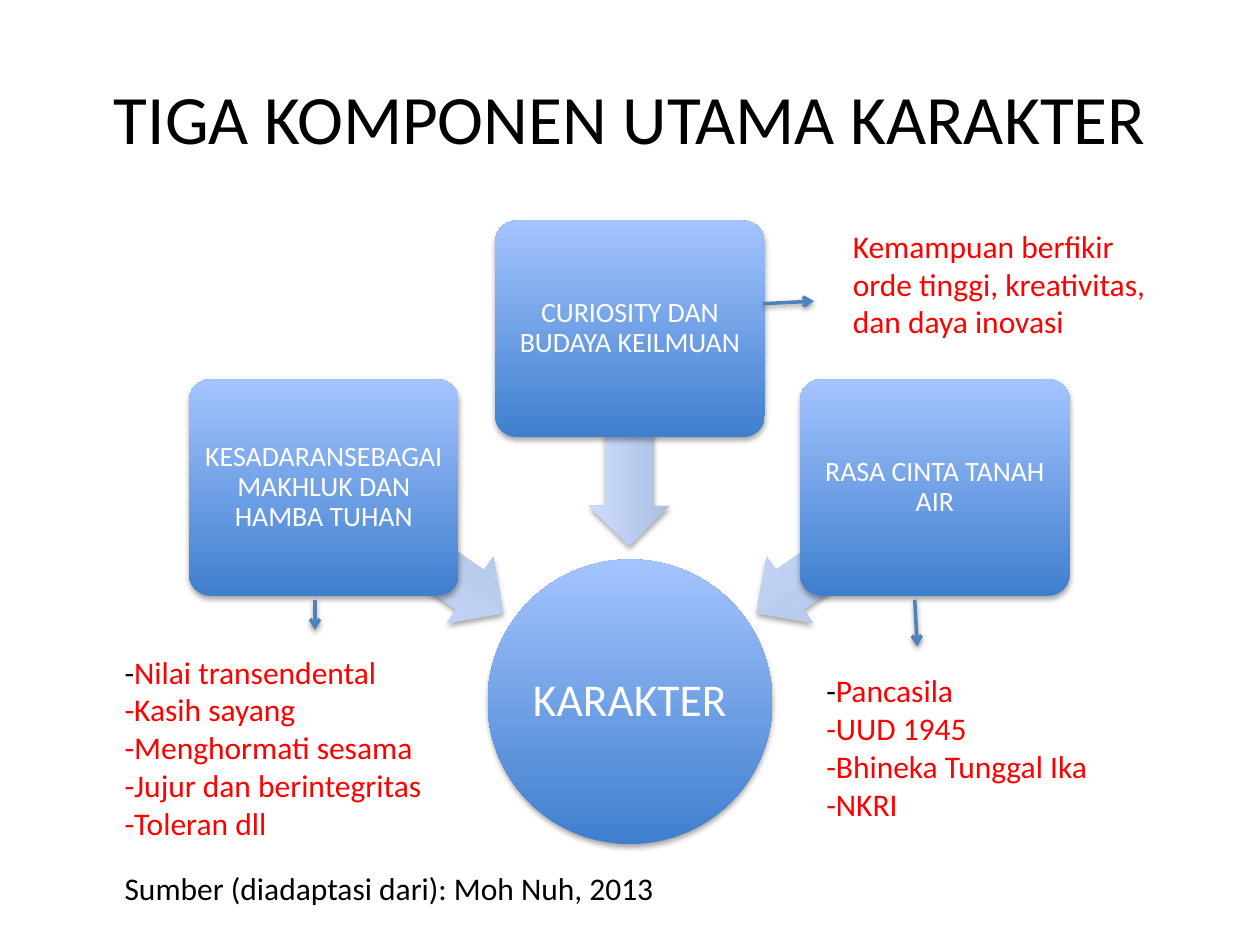
import pptx
import pptx.util
import pptx.dml.color
import pptx.enum.shapes
import pptx.enum.text
import pptx.oxml
import pptx.oxml.ns
from pptx.util import Inches

RGBColor = pptx.dml.color.RGBColor
BLACK = RGBColor(0x00, 0x00, 0x00)
WHITE = RGBColor(0xFF, 0xFF, 0xFF)
RED = RGBColor(0xFF, 0x00, 0x00)
LINE_BLUE = RGBColor(0x4F, 0x81, 0xBD)
BOX_GRADIENT = (RGBColor(0x3F, 0x7F, 0xCE), RGBColor(0xA4, 0xC4, 0xFF))
ARROW_GRADIENT = (RGBColor(0xAD, 0xBF, 0xE1), RGBColor(0xCC, 0xDD, 0xFF))
SHAPES = pptx.enum.shapes.MSO_SHAPE
MIDDLE = pptx.enum.text.MSO_ANCHOR.MIDDLE
CENTER = pptx.enum.text.PP_ALIGN.CENTER
SHADOW_XML = (
    '<a:effectLst {}><a:outerShdw blurRad="40000" dist="{}" dir="5400000" rotWithShape="0">'
    '<a:srgbClr val="000000"><a:alpha val="{}"/></a:srgbClr></a:outerShdw></a:effectLst>'
)
NAMESPACE = pptx.oxml.ns.nsdecls("a")


def format_runs(text_frame, size, color):
    for paragraph in text_frame.paragraphs:
        for run in paragraph.runs:
            run.font.name = "Calibri"
            run.font.size = pptx.util.Pt(size)
            run.font.color.rgb = color


def add_gradient_shape(kind, left, top, width, height, colors, text="", size=16, inset=0.03):
    shape = slide.shapes.add_shape(kind, Inches(left), Inches(top), Inches(width), Inches(height))
    shape.fill.gradient()
    shape.fill.gradient_angle = 90
    for stop, color in zip(shape.fill.gradient_stops, colors):
        stop.color.rgb = color
    shape.line.fill.background()
    shape._element.spPr.append(pptx.oxml.parse_xml(SHADOW_XML.format(NAMESPACE, 23000, 35000)))
    text_frame = shape.text_frame
    text_frame.word_wrap = True
    text_frame.vertical_anchor = MIDDLE
    text_frame.margin_left = text_frame.margin_right = Inches(inset)
    text_frame.margin_top = text_frame.margin_bottom = Inches(inset)
    text_frame.text = text
    text_frame.paragraphs[0].alignment = CENTER
    text_frame.paragraphs[0].line_spacing = 0.9
    format_runs(text_frame, size, WHITE)
    return shape


presentation = pptx.Presentation()
presentation.slide_width = Inches(10)
presentation.slide_height = Inches(7.5)
slide = presentation.slides.add_slide(presentation.slide_layouts[5])

title = slide.shapes.title
title.left, title.top, title.width, title.height = Inches(0.5), Inches(0.3), Inches(9), Inches(1.25)
title.text_frame.text = "TIGA KOMPONEN UTAMA KARAKTER"
title.text_frame.vertical_anchor = MIDDLE
title.text_frame.paragraphs[0].alignment = CENTER
format_runs(title.text_frame, 39.6, BLACK)

add_gradient_shape(SHAPES.OVAL, 3.87, 4.44, 2.26, 2.26, BOX_GRADIENT, "KARAKTER", 26, 0.02)

components = [
    ("KESADARANSEBAGAI MAKHLUK DAN HAMBA TUHAN", 1.5, 3.01, 2.42, 4.05, 215),
    ("CURIOSITY DAN BUDAYA KEILMUAN", 3.93, 1.75, 4.13, 3.15, 270),
    ("RASA CINTA TANAH AIR", 6.35, 3.01, 5.85, 4.05, 325),
]
for text, box_left, box_top, arrow_left, arrow_top, rotation in components:
    arrow = add_gradient_shape(SHAPES.LEFT_ARROW, arrow_left, arrow_top, 1.73, 0.64, ARROW_GRADIENT)
    arrow.adjustments[0] = 0.6
    arrow.adjustments[1] = 0.5
    arrow.rotation = rotation
    box = add_gradient_shape(
        SHAPES.ROUNDED_RECTANGLE, box_left, box_top, 2.14, 1.72, BOX_GRADIENT, text
    )
    box.adjustments[0] = 0.1

notes = [
    (0.89, 6.85, 5.39, 0.4, BLACK, ["Sumber (diadaptasi dari): Moh Nuh, 2013"]),
    (0.89, 5.13, 2.78, 1.62, RED, [
        "-Nilai transendental", "-Kasih sayang", "-Menghormati sesama",
        "-Jujur dan berintegritas", "-Toleran dll",
    ]),
    (6.67, 1.75, 2.56, 1.01, RED, [
        "Kemampuan berfikir orde tinggi, kreativitas, dan daya inovasi",
    ]),
    (6.46, 5.28, 2.56, 1.31, RED, [
        "-Pancasila", "-UUD 1945", "-Bhineka Tunggal Ika", "-NKRI",
    ]),
]
for left, top, width, height, color, lines in notes:
    text_box = slide.shapes.add_textbox(Inches(left), Inches(top), Inches(width), Inches(height))
    text_frame = text_box.text_frame
    text_frame.word_wrap = True
    text_frame.text = "\n".join(lines)
    first = text_frame.paragraphs[0]
    has_dash = lines[0].startswith("-")
    if has_dash:
        first.runs[0].text = "-"
        first.add_run().text = lines[0][1:]
    format_runs(text_frame, 18, color)
    if has_dash:
        first.runs[0].font.color.rgb = BLACK

pointers = [(2.5, 4.76, 2.5, 5), (7.26, 4.76, 7.28, 5.13), (6.06, 2.41, 6.46, 2.39)]
for pointer in pointers:
    connector = slide.shapes.add_connector(
        pptx.enum.shapes.MSO_CONNECTOR.STRAIGHT, *[Inches(value) for value in pointer]
    )
    connector.line.color.rgb = LINE_BLUE
    connector.line.width = pptx.util.Pt(2)
    properties = connector._element.spPr
    line = properties.find(pptx.oxml.ns.qn("a:ln"))
    line.append(pptx.oxml.parse_xml(f'<a:tailEnd {NAMESPACE} type="arrow"/>'))
    properties.append(pptx.oxml.parse_xml(SHADOW_XML.format(NAMESPACE, 20000, 38000)))

presentation.save("out.pptx")
